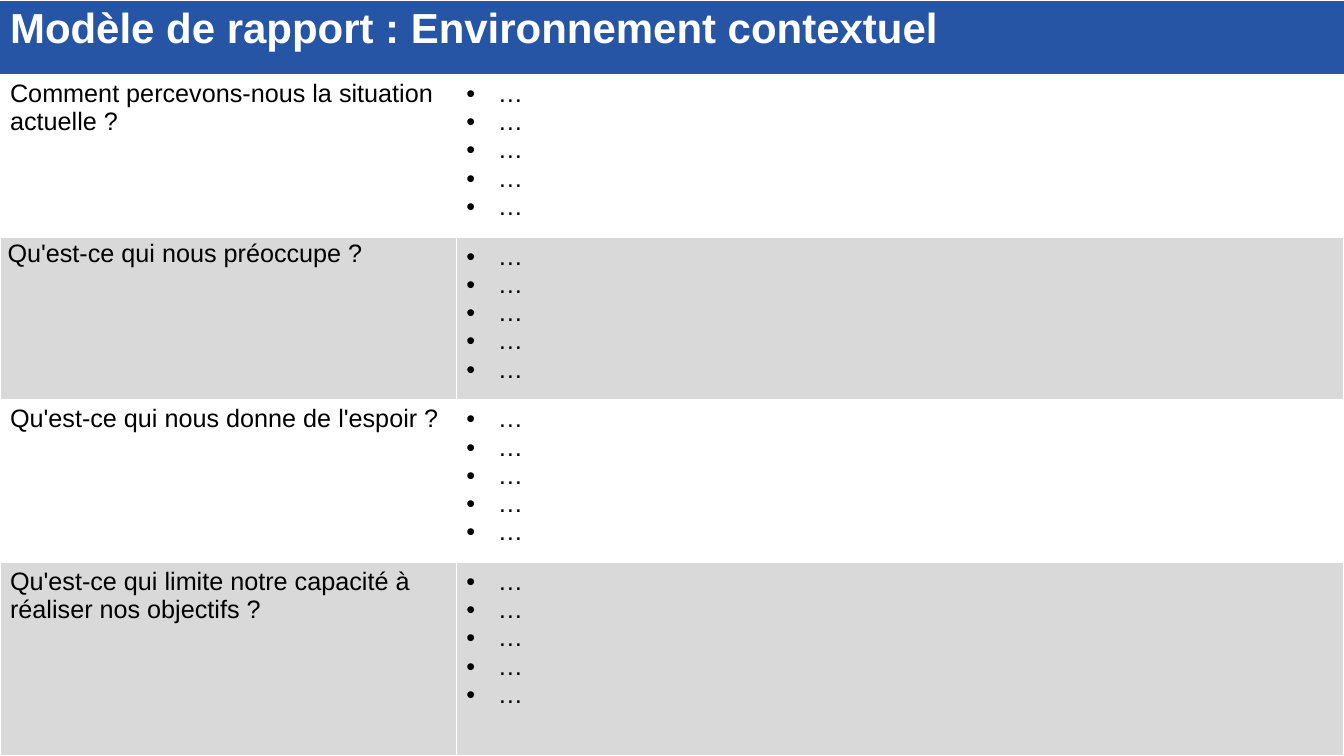
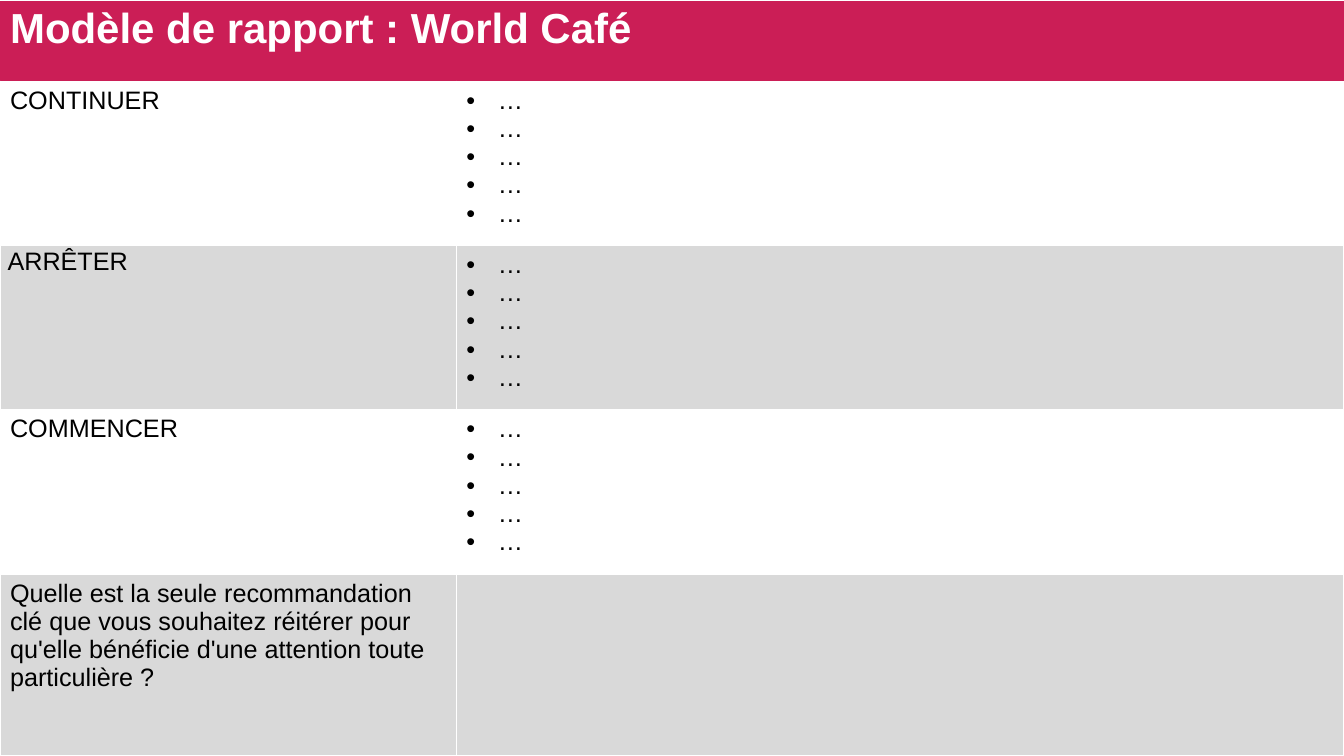
from lxml.etree import SubElement
from pptx import Presentation
from pptx.dml.color import RGBColor
from pptx.oxml.ns import qn
from pptx.util import Cm, Pt

SLIDE_WIDTH, SLIDE_HEIGHT = Cm(33.87), Cm(19.05)
QUESTION_WIDTH = Cm(11.5)
BULLET_INDENT = Cm(0.79)
FONT = "Arial"
BLANK_LAYOUT = 6
WHITE, BLACK, GREY = "FFFFFF", "000000", "D9D9D9"
BLUE, RED = "2655A6", "CB1E56"
ANSWERS = ["…"] * 5

REPORTS = [
    dict(
        title="Modèle de rapport : Environnement contextuel",
        color=BLUE,
        header_height=Cm(1.88),
        row_height=Cm(4.1),
        rows=[
            ("Comment percevons-nous la situation actuelle ?", ANSWERS),
            ("Qu'est-ce qui nous préoccupe ?", ANSWERS),
            ("Qu'est-ce qui nous donne de l'espoir ?", ANSWERS),
            ("Qu'est-ce qui limite notre capacité à réaliser nos objectifs ?", ANSWERS),
        ],
    ),
    dict(
        title="Modèle de rapport : World Café",
        color=RED,
        header_height=Cm(2.05),
        row_height=Cm(4.14),
        rows=[
            ("CONTINUER", ANSWERS),
            ("ARRÊTER", ANSWERS),
            ("COMMENCER", ANSWERS),
            ("Quelle est la seule recommandation clé que vous souhaitez réitérer "
             "pour qu'elle bénéficie d'une attention toute particulière ?", []),
        ],
    ),
]


def rgb(color):
    return RGBColor.from_string(color)


def add_bullet(paragraph):
    properties = paragraph._p.get_or_add_pPr()
    properties.set("marL", str(BULLET_INDENT))
    properties.set("indent", str(-BULLET_INDENT))
    SubElement(properties, qn("a:buFont"), typeface=FONT)
    SubElement(properties, qn("a:buChar"), char="•")


def write(text_frame, lines, size=18, color=BLACK, bold=False, bullets=False):
    """Write each line as a paragraph of its own."""
    for index, line in enumerate(lines):
        paragraph = text_frame.add_paragraph() if index else text_frame.paragraphs[0]
        run = paragraph.add_run()
        run.text = line
        run.font.name = FONT
        run.font.size = Pt(size)
        run.font.bold = bold
        run.font.color.rgb = rgb(color)
        if bullets:
            add_bullet(paragraph)


def style_cell(cell, fill, border=None):
    """Fill a cell and draw its left and right borders, or hide them."""
    properties = cell._tc.get_or_add_tcPr()
    for side in ("a:lnL", "a:lnR"):
        line = SubElement(properties, qn(side), w=str(Pt(1)))
        if border:
            solid = SubElement(line, qn("a:solidFill"))
            SubElement(solid, qn("a:srgbClr"), val=border)
        else:
            SubElement(line, qn("a:noFill"))
    cell.fill.solid()
    cell.fill.fore_color.rgb = rgb(fill)


def set_tight_layout(cell):
    """Drop the vertical margins and space the paragraph instead."""
    cell.margin_left = cell.margin_right = Cm(0.19)
    cell.margin_top = cell.margin_bottom = 0
    paragraph = cell.text_frame.paragraphs[0]
    paragraph.line_spacing = 1.07
    paragraph.space_before = Pt(6)
    paragraph.space_after = Pt(8)


def fill_header(table, title, color):
    left, right = table.cell(0, 0), table.cell(0, 1)
    left.merge(right)
    for cell in (left, right):
        style_cell(cell, color)
    write(left.text_frame, [title], size=30, color=WHITE, bold=True)


def fill_row(table, index, question, answers):
    question_cell, answer_cell = table.cell(index, 0), table.cell(index, 1)
    for cell in (question_cell, answer_cell):
        style_cell(cell, WHITE if index % 2 else GREY, border=WHITE)
    write(question_cell.text_frame, [question])
    write(answer_cell.text_frame, answers, bullets=True)


def add_report_table(slide, left, top, width, height, title, color,
                     header_height, row_height, rows):
    frame = slide.shapes.add_table(len(rows) + 1, 2, left, top, width, height)
    table = frame.table
    table.first_row = table.horz_banding = False
    table.columns[0].width = QUESTION_WIDTH
    table.columns[1].width = width - QUESTION_WIDTH

    upper_heights = [header_height] + [row_height] * (len(rows) - 1)
    heights = upper_heights + [height - sum(upper_heights)]
    for row, row_size in zip(table.rows, heights):
        row.height = row_size

    fill_header(table, title, color)
    for index, (question, answers) in enumerate(rows, start=1):
        fill_row(table, index, question, answers)
    set_tight_layout(table.cell(2, 0))


def main():
    presentation = Presentation()
    presentation.slide_width = SLIDE_WIDTH
    presentation.slide_height = SLIDE_HEIGHT
    for report in REPORTS:
        slide = presentation.slides.add_slide(presentation.slide_layouts[BLANK_LAYOUT])
        add_report_table(slide, 0, 0, SLIDE_WIDTH, SLIDE_HEIGHT, **report)
    presentation.save("out.pptx")


if __name__ == "__main__":
    main()
